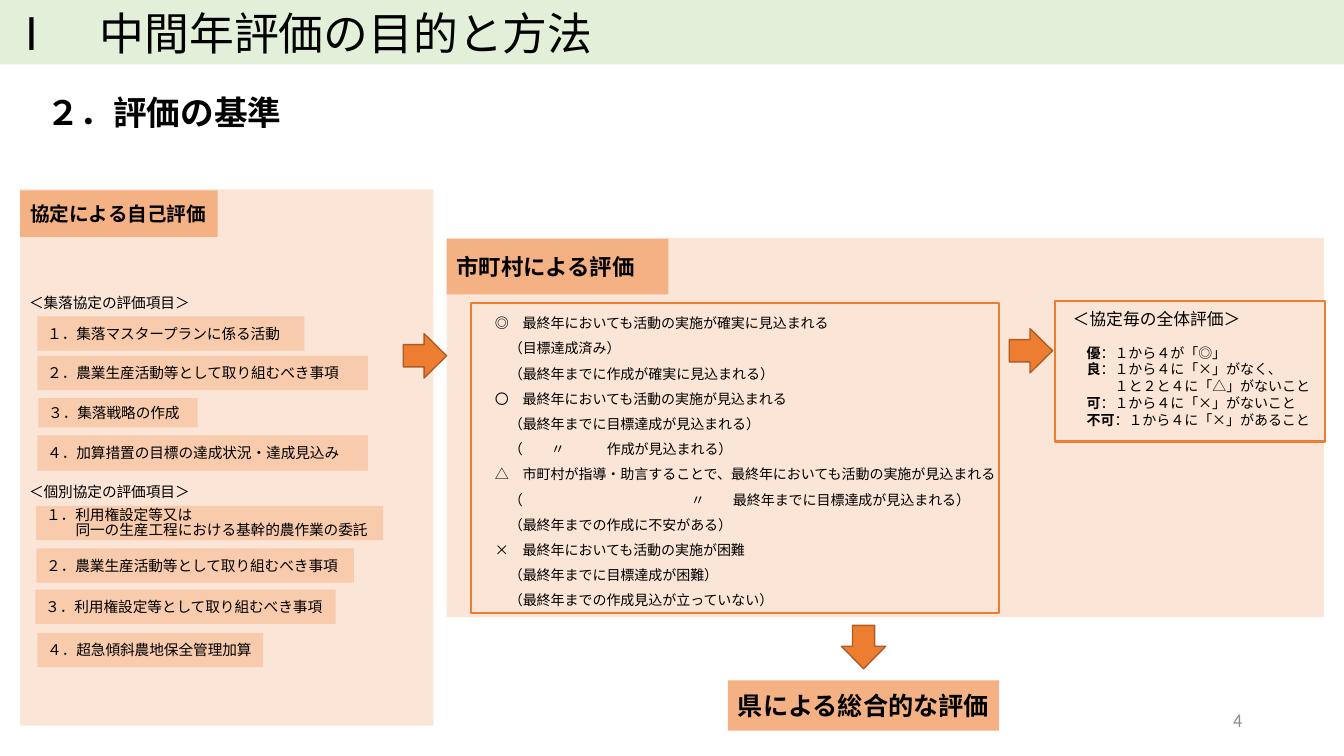
import pptx
import pptx.util
import pptx.dml.color
import pptx.enum.shapes
import pptx.enum.text
import pptx.oxml.ns
import lxml.etree

Pt = pptx.util.Pt
forms = pptx.enum.shapes.MSO_SHAPE
aligns = pptx.enum.text.PP_ALIGN
anchors = pptx.enum.text.MSO_ANCHOR
qn = pptx.oxml.ns.qn

theme = {
    "font": "Noto Sans CJK JP",
    "ink": "000000", "gray": "8C8C8C",
    "green": "E2F0D9", "pale": "FBE5D6", "peach": "F8CBAD",
    "tan": "F4B183", "orange": "ED7D31", "brown": "AF5C24",
    "banner": 32, "title": 24, "total": 18, "town": 16, "self": 14,
    "head": 12, "item": 10.5, "body": 10,
}

deck = pptx.Presentation()
deck.slide_width = pptx.util.Inches(13.33)
deck.slide_height = pptx.util.Inches(7.5)
slide = deck.slides.add_slide(deck.slide_layouts[6])
col = deck.slide_width / 133.3
row = deck.slide_height / 75


def style(para, size, bold=False, color="ink"):
    for run in para.runs:
        font = run.font
        font.name = theme["font"]
        font.size = Pt(theme[size])
        font.bold = bold
        font.color.rgb = pptx.dml.color.RGBColor.from_string(theme[color])
        east = lxml.etree.SubElement(run._r.get_or_add_rPr(), qn("a:ea"))
        east.set("typeface", theme["font"])


def block(place, text="", size="item", fill=None, edge=None, width=1.5,
          bold=False, color="ink", form=forms.RECTANGLE):
    x, y, w, h = place
    area = [round(n) for n in (x * col, y * row, w * col, h * row)]
    if fill or edge:
        shape = slide.shapes.add_shape(form, *area)
        shape.shadow.inherit = False
        if fill:
            shape.fill.solid()
            shape.fill.fore_color.rgb = pptx.dml.color.RGBColor.from_string(theme[fill])
        else:
            shape.fill.background()
        if edge:
            shape.line.color.rgb = pptx.dml.color.RGBColor.from_string(theme[edge])
            shape.line.width = Pt(width)
        else:
            shape.line.fill.background()
    else:
        shape = slide.shapes.add_textbox(*area)
    if text:
        frame = shape.text_frame
        frame.word_wrap = True
        frame.vertical_anchor = anchors.MIDDLE
        frame.text = text
        for para in frame.paragraphs:
            para.alignment = aligns.LEFT
            style(para, size, bold, color)
    return shape


block((44.3, 23.6, 87, 37.6), fill="pale")
block((2, 18.8, 41, 53.2), fill="pale")
block((0, 0, 133.3, 6.4), "Ⅰ　中間年評価の目的と方法", "banner", "green")
block((3.6, 8.7, 126.3, 4.8), "２．評価の基準", "title", bold=True)
page = block((94.2, 69.5, 30, 4), "4", "head", color="gray")
page.text_frame.paragraphs[0].alignment = aligns.RIGHT

for place, text, size in [
    ((2, 18.9, 19.6, 4.6), "協定による自己評価", "self"),
    ((44.3, 23.7, 22, 5.5), "市町村による評価", "town"),
    ((72.2, 67.5, 26.9, 5), "県による総合的な評価", "total"),
]:
    block(place, text, size, "tan", bold=True)

for top, text in [(28.6, "＜集落協定の評価項目＞"), (47.4, "＜個別協定の評価項目＞")]:
    block((1.9, top, 19.6, 2.8), text)

for place, text in [
    ((3.7, 31.4, 26.5, 3.4), "１．集落マスタープランに係る活動"),
    ((3.7, 35.3, 32.8, 3.4), "２．農業生産活動等として取り組むべき事項"),
    ((3.8, 39.5, 15.8, 2.9), "３．集落戦略の作成"),
    ((3.7, 43.2, 32.8, 3.5), "４．加算措置の目標の達成状況・達成見込み"),
    ((3.6, 50.2, 34.4, 3.4), "１．利用権設定等又は\n同一の生産工程における基幹的農作業の委託"),
    ((3.6, 54.4, 31.5, 3.4), "２．農業生産活動等として取り組むべき事項"),
    ((3.5, 58.5, 29.8, 3.4), "３．利用権設定等として取り組むべき事項"),
    ((3.7, 62.8, 22.4, 3.4), "４．超急傾斜農地保全管理加算"),
]:
    item = block(place, text, fill="peach")
    for para in item.text_frame.paragraphs[1:]:
        para._p.get_or_add_pPr().set("marL", str(Pt(21)))
    if "\n" in text:
        for para in item.text_frame.paragraphs:
            para.line_spacing = Pt(11)

for x, y, turn in [(40, 33.1, 0), (100.1, 32.6, 0), (83.5, 62, 90)]:
    arrow = block((x, y, 4.3, 4.4), fill="orange", edge="brown", width=1,
                  form=forms.RIGHT_ARROW)
    arrow.adjustments[0] = 0.5
    arrow.adjustments[1] = 0.52
    arrow.rotation = turn

grades = [
    ("◎", "　最終年においても活動の実施が確実に見込まれる", []),
    ("", "\t（目標達成済み）", [10]),
    ("", "\t（最終年までに作成が確実に見込まれる）", [10]),
    ("", "〇　最終年においても活動の実施が見込まれる", []),
    ("", "\t（最終年までに目標達成が見込まれる）", [10]),
    ("", "\t（\t〃\t作成が見込まれる）", [10, 40, 80]),
    ("", "△　市町村が指導・助言することで、最終年においても活動の実施が見込まれる", []),
    ("", "\t（\t〃\t最終年までに目標達成が見込まれる）", [10, 140, 170]),
    ("", "\t（最終年までの作成に不安がある）", [10]),
    ("", "×　最終年においても活動の実施が困難", []),
    ("", "\t（最終年までに目標達成が困難）", [10]),
    ("", "\t（最終年までの作成見込が立っていない）", [10]),
]
totals = [
    ("", "＜協定毎の全体評価＞", []),
    ("優", "：１から４が「◎」", [10]),
    ("良", "：１から４に「×」がなく、", [10]),
    ("", "１と２と４に「△」がないこと", [30]),
    ("可", "：１から４に「×」がないこと", [10]),
    ("不可", "：１から４に「×」があること", [10]),
]
for place, lines, pitch in [
    ((48.1, 29.9, 52.6, 31.1), grades, 18),
    ((105.4, 29.9, 26.8, 15.4), totals, 12),
]:
    panel = block(place, "\n".join(mark + text for mark, text, stops in lines), "body")
    panel.text_frame.vertical_anchor = anchors.TOP
    for para, (mark, text, stops) in zip(panel.text_frame.paragraphs, lines):
        para.line_spacing = Pt(pitch)
        if mark:
            para.text = mark
            style(para, "body", True)
            rest = para.add_run()
            rest.text = text
            rest.font.size = Pt(theme["body"])
            rest.font.name = theme["font"]
            rest.font.bold = False
            rest.font.color.rgb = pptx.dml.color.RGBColor.from_string(theme["ink"])
            east = lxml.etree.SubElement(rest._r.get_or_add_rPr(), qn("a:ea"))
            east.set("typeface", theme["font"])
        props = para._p.get_or_add_pPr()
        if "\t" in text:
            tabs = lxml.etree.SubElement(props, qn("a:tabLst"))
            for stop in stops:
                lxml.etree.SubElement(tabs, qn("a:tab"), pos=str(Pt(stop)), algn="l")
        elif stops:
            props.set("marL", str(Pt(stops[0])))

first, second = panel.text_frame.paragraphs[:2]
first.line_spacing = Pt(16)
first.runs[0].font.size = Pt(theme["head"])
second.space_before = Pt(11)

block((46.7, 30.1, 52.4, 30.7), edge="orange")
block((104.6, 29.9, 26.8, 13.9), edge="orange")

deck.save("out.pptx")
